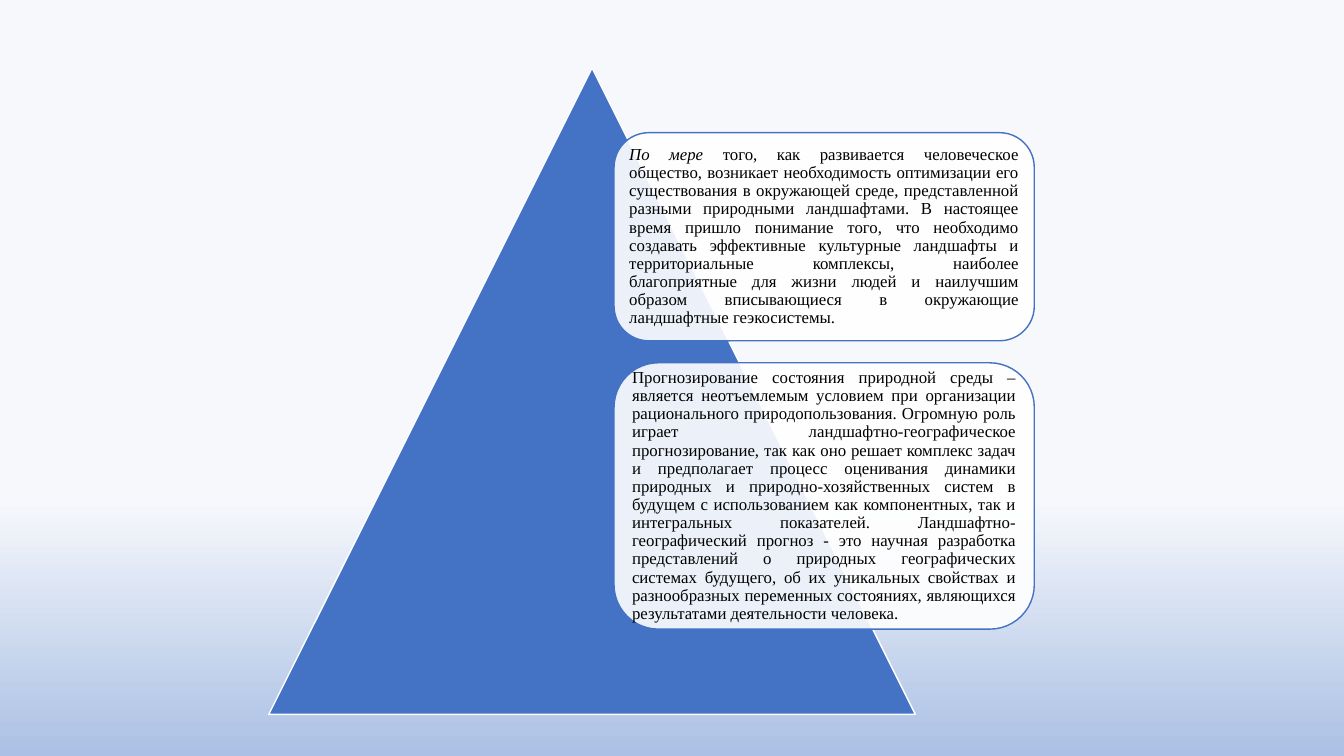
import pptx
import pptx.dml.color
import pptx.enum.shapes
import pptx.enum.text
import pptx.oxml.ns
import pptx.util
from lxml import etree

COLORS = {
    "sky": "F6F8FC",
    "horizon": "ABC0E4",
    "blue": "4472C4",
    "white": "FFFFFF",
    "black": "000000",
}
WIDTH, HEIGHT = 13.33, 7.5
FONT = "Times New Roman"
CARD_OPACITY = 90

DEVELOPMENT = [
    ("По мере", True),
    (" того, как развивается человеческое общество, возникает необходимость "
     "оптимизации его существования в окружающей среде, представленной разными "
     "природными ландшафтами. В настоящее время пришло понимание того, что "
     "необходимо создавать эффективные культурные ландшафты и территориальные "
     "комплексы, наиболее благоприятные для жизни людей и наилучшим образом "
     "вписывающиеся в окружающие ландшафтные геэкосистемы.", False),
]
FORECASTING = [
    ("Прогнозирование состояния природной среды – является неотъемлемым условием "
     "при организации рационального природопользования. Огромную роль играет "
     "ландшафтно-географическое прогнозирование, так как оно решает комплекс задач "
     "и предполагает процесс оценивания динамики природных и природно-хозяйственных "
     "систем в будущем с использованием как компонентных, так и интегральных "
     "показателей. Ландшафтно-географический прогноз - это научная разработка "
     "представлений о природных географических системах будущего, об их уникальных "
     "свойствах и разнообразных переменных состояниях, являющихся результатами "
     "деятельности человека.", False),
]


def color(name):
    return pptx.dml.color.RGBColor.from_string(COLORS[name])


def paint_background(slide):
    fill = slide.background.fill
    fill.gradient()
    fill.gradient_angle = 270
    for stop, position, name in zip(fill.gradient_stops, (0.66, 1), ("sky", "horizon")):
        stop.position = position
        stop.color.rgb = color(name)


def add_outlined_shape(slide, kind, box, fill, line):
    shape = slide.shapes.add_shape(kind, *(pptx.util.Inches(length) for length in box))
    shape.shadow.inherit = False
    shape.fill.solid()
    shape.fill.fore_color.rgb = color(fill)
    shape.line.color.rgb = color(line)
    shape.line.width = pptx.util.Pt(1)
    return shape


def set_opacity(shape, percent):
    fill_color = shape.fill._xPr.find(".//" + pptx.oxml.ns.qn("a:srgbClr"))
    alpha = etree.SubElement(fill_color, pptx.oxml.ns.qn("a:alpha"))
    alpha.set("val", str(percent * 1000))


def add_card(slide, box, runs):
    card = add_outlined_shape(
        slide, pptx.enum.shapes.MSO_SHAPE.ROUNDED_RECTANGLE, box, "white", "blue")
    set_opacity(card, CARD_OPACITY)
    frame = card.text_frame
    frame.word_wrap = True
    frame.vertical_anchor = pptx.enum.text.MSO_ANCHOR.MIDDLE
    for side in ("left", "top", "right", "bottom"):
        setattr(frame, "margin_" + side, pptx.util.Inches(0.05))
    paragraph = frame.paragraphs[0]
    paragraph.alignment = pptx.enum.text.PP_ALIGN.JUSTIFY
    paragraph.line_spacing = 0.9
    for text, italic in runs:
        run = paragraph.add_run()
        run.text = text
        run.font.name = FONT
        run.font.size = pptx.util.Pt(12)
        run.font.italic = italic
        run.font.color.rgb = color("black")


def add_pyramid_list(slide, left, top, size):
    add_outlined_shape(
        slide, pptx.enum.shapes.MSO_SHAPE.ISOSCELES_TRIANGLE,
        (left, top, size, size), "blue", "white")
    card_left = left + size * 0.534
    card_width = size * 0.65
    card_top = top + size * 0.1
    for runs, share in ((DEVELOPMENT, 0.322), (FORECASTING, 0.412)):
        card_height = size * share
        add_card(slide, (card_left, card_top, card_width, card_height), runs)
        card_top += card_height + size * 0.034


def main():
    presentation = pptx.Presentation()
    presentation.slide_width = pptx.util.Inches(WIDTH)
    presentation.slide_height = pptx.util.Inches(HEIGHT)
    slide = presentation.slides.add_slide(presentation.slide_layouts[6])
    paint_background(slide)
    add_pyramid_list(slide, WIDTH * 0.2, HEIGHT * 0.09, HEIGHT * 0.855)
    presentation.save("out.pptx")


if __name__ == "__main__":
    main()
